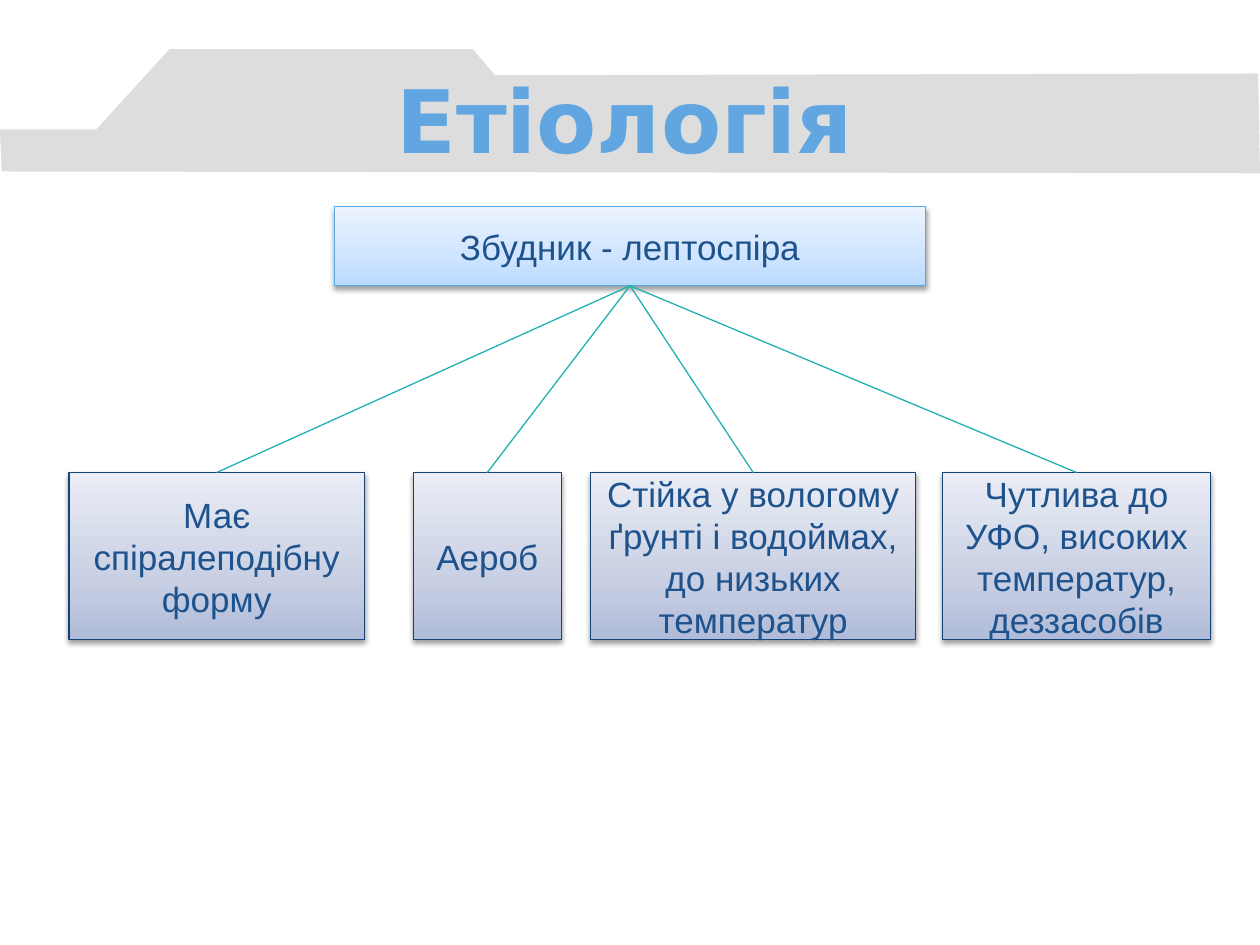
from copy import deepcopy

from lxml import etree
from pptx import Presentation
from pptx.dml.color import RGBColor
from pptx.enum.shapes import MSO_CONNECTOR, MSO_SHAPE
from pptx.enum.text import MSO_ANCHOR, PP_ALIGN
from pptx.oxml.ns import qn
from pptx.util import Pt

RECT, LINE = MSO_SHAPE.RECTANGLE, MSO_CONNECTOR.STRAIGHT
MIDDLE, CENTER = MSO_ANCHOR.MIDDLE, PP_ALIGN.CENTER
BOTTOM, TOP = 2, 0  # connection sites of a rectangle

GREY = RGBColor(0xDD, 0xDD, 0xDD)
INK = RGBColor(0x1D, 0x52, 0x8D)
SKY = RGBColor(0x56, 0xA9, 0xE7)
NAVY = RGBColor(0x14, 0x43, 0x78)
TEAL = RGBColor(0x21, 0xB1, 0xB1)
EDGE = RGBColor(0x6B, 0xA9, 0xE2)
MID = RGBColor(0x61, 0xA5, 0xE1)
CORE = RGBColor(0x48, 0x94, 0xCF)

TITLE = [(0, EDGE), (0.25, MID), (0.5, CORE), (0.75, MID), (1, EDGE)]
BLUE = [(0, RGBColor(0xB9, 0xDA, 0xFF)), (0.35, RGBColor(0xCE, 0xE4, 0xFF)),
        (1, RGBColor(0xEC, 0xF4, 0xFF))]
STEEL = [(0, RGBColor(0xAF, 0xBB, 0xD8)), (0.35, RGBColor(0xC8, 0xCF, 0xE3)),
         (1, RGBColor(0xEA, 0xED, 0xF5))]

BAND = [(0, 74.2), (54.8, 74.2), (97.2, 28.3), (270.2, 28.3),
        (283, 42.9), (719.4, 42.3), (720.5, 99.2), (0.6, 97.8)]

# Left edge, width and wording of each trait
TRAITS = [
    (39.4, 168.9, "Має спіралеподібну форму"),
    (236.3, 84.4, "Аероб"),
    (337.5, 185.8, "Стійка у вологому ґрунті і водоймах, до низьких температур"),
    (538.4, 153.5, "Чутлива до УФО, високих температур, деззасобів"),
]


def shade(fill, owner, stops, angle):
    """Gradient with any number of stops; owner is the element holding it."""
    fill.gradient()
    fill.gradient_angle = angle
    rows = owner.find(qn("a:gradFill")).find(qn("a:gsLst"))
    while len(rows) < len(stops):
        rows.append(deepcopy(rows[0]))
    for stop, (place, color) in zip(fill.gradient_stops, stops):
        stop.position = place
        stop.color.rgb = color


def drop(shape):
    """Soft shadow straight below the shape."""
    shape.shadow.inherit = False
    effects = shape._element.spPr.find(qn("a:effectLst"))
    outer = etree.SubElement(effects, qn("a:outerShdw"), blurRad=str(Pt(3.1)),
                             dist=str(Pt(1.6)), dir="5400000", rotWithShape="0")
    black = etree.SubElement(outer, qn("a:srgbClr"), val="000000")
    etree.SubElement(black, qn("a:alpha"), val="38000")


def write(shape, text, font, size):
    """Centred text in the middle of the shape; gives back its run."""
    frame = shape.text_frame
    frame.text = text
    frame.word_wrap = True
    frame.vertical_anchor = MIDDLE
    para = frame.paragraphs[0]
    para.alignment = CENTER
    run = para.runs[0]
    run.font.name = font
    run.font.size = Pt(size)
    return run


def add_band(slide):
    pen = slide.shapes.build_freeform(*BAND[0], scale=Pt(1))
    pen.add_line_segments(BAND[1:], close=True)
    band = pen.convert_to_shape()
    band.shadow.inherit = False
    band.fill.solid()
    band.fill.fore_color.rgb = GREY
    band.line.fill.background()


def add_title(slide, text):
    box = slide.shapes.add_textbox(Pt(48.2), Pt(45.4), Pt(617.8), Pt(44.6))
    run = write(box, text, "DejaVu Sans", 50)
    run.font.bold = True
    shade(run.font.fill, run._r.rPr, TITLE, 270)


def add_box(slide, left, top, width, height, text, stops, edge):
    box = slide.shapes.add_shape(RECT, Pt(left), Pt(top), Pt(width), Pt(height))
    shade(box.fill, box._element.spPr, stops, 90)
    box.line.color.rgb = edge
    box.line.width = Pt(0.75)
    drop(box)
    write(box, text, "Arial", 20).font.color.rgb = INK
    return box


def add_link(slide, start, end):
    link = slide.shapes.add_connector(LINE, 0, 0, 0, 0)
    link.begin_connect(start, BOTTOM)
    link.end_connect(end, TOP)
    link.line.color.rgb = TEAL
    link.line.width = Pt(0.75)
    etree.SubElement(link._element.spPr, qn("a:effectLst"))


def main():
    deck = Presentation()
    deck.slide_width, deck.slide_height = Pt(720), Pt(540)
    slide = deck.slides.add_slide(deck.slide_layouts[6])

    # Heading
    add_band(slide)
    add_title(slide, "Етіологія")

    # Pathogen and its traits
    root = add_box(slide, 191.2, 118, 337.6, 45.3,
                   "Збудник - лептоспіра", BLUE, SKY)
    boxes = [add_box(slide, left, 270, width, 95.6, text, STEEL, NAVY)
             for left, width, text in TRAITS]
    for box in boxes:
        add_link(slide, root, box)

    deck.save("out.pptx")


if __name__ == "__main__":
    main()
